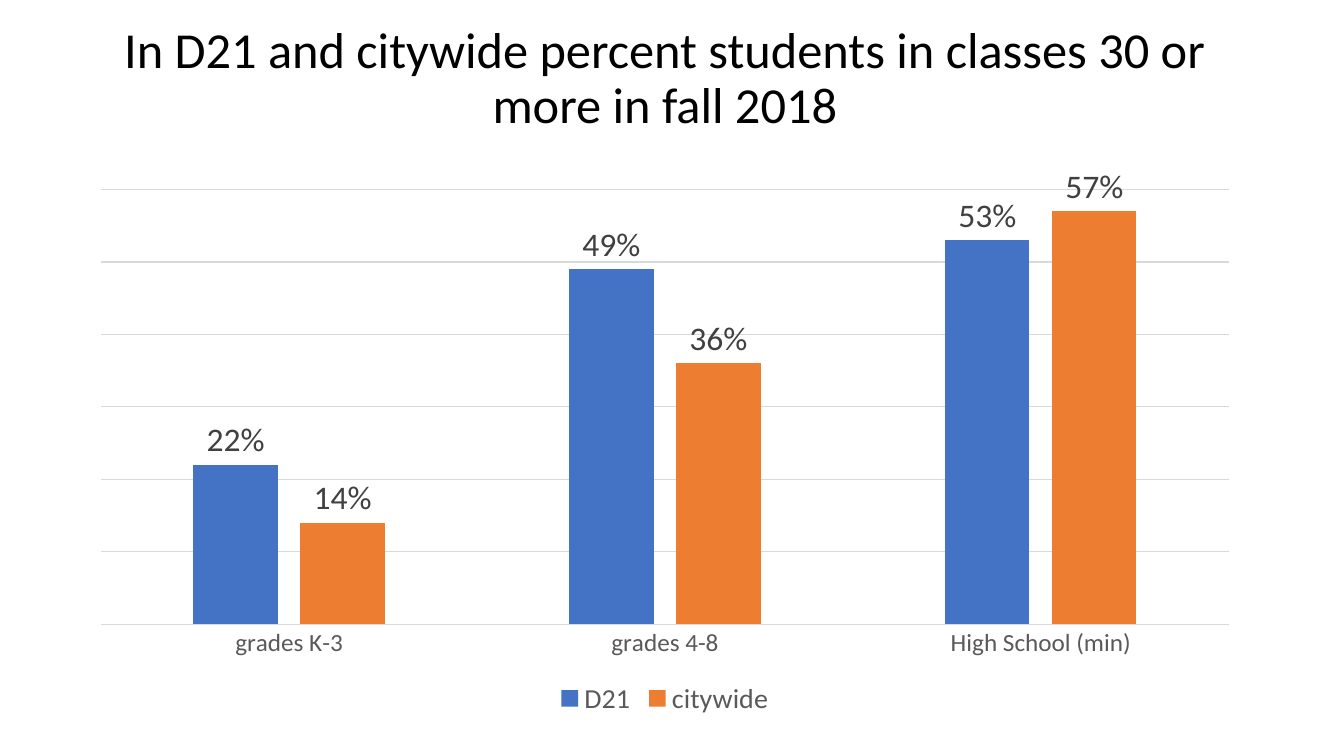
"""Build a slide with a column chart of students in classes of 30 or more."""
from pptx import Presentation
from pptx.chart.data import CategoryChartData
from pptx.dml.color import RGBColor
from pptx.enum.chart import XL_CHART_TYPE, XL_LABEL_POSITION, XL_LEGEND_POSITION, XL_TICK_MARK
from pptx.enum.text import MSO_ANCHOR, PP_ALIGN
from pptx.util import Pt

COLUMNS = XL_CHART_TYPE.COLUMN_CLUSTERED
OUTSIDE_END = XL_LABEL_POSITION.OUTSIDE_END
BOTTOM = XL_LEGEND_POSITION.BOTTOM
NO_TICK = XL_TICK_MARK.NONE
MIDDLE = MSO_ANCHOR.MIDDLE
CENTER = PP_ALIGN.CENTER

FONT = "Calibri"
GRID = "D9D9D9"
LEFT, WIDTH = Pt(55.5), Pt(839)


def rgb(color):
    return RGBColor.from_string(color)


def style_font(font, size, color):
    font.name = FONT
    font.size = Pt(size)
    font.bold = False
    font.color.rgb = rgb(color)


prs = Presentation()
prs.slide_width, prs.slide_height = Pt(960), Pt(540)
s = prs.slides.add_slide(prs.slide_layouts[6])

sp = s.shapes.add_textbox(LEFT, Pt(16), WIDTH, Pt(82))
tf = sp.text_frame
tf.word_wrap = True
tf.vertical_anchor = MIDDLE
p = tf.paragraphs[0]
p.alignment = CENTER
p.line_spacing = 0.9
r = p.add_run()
r.text = "In D21 and citywide percent students in classes 30 or more in fall 2018"
style_font(r.font, 36, "000000")

data = CategoryChartData(number_format="0%")
data.categories = ["grades K-3", "grades 4-8", "High School (min)"]
data.add_series("D21", [0.22, 0.49, 0.53])
data.add_series("citywide", [0.14, 0.36, 0.57])
chart = s.shapes.add_chart(COLUMNS, LEFT, Pt(119.5), WIDTH, Pt(395.5), data).chart
style_font(chart.font, 10, "000000")
chart.has_title = False
chart.has_legend = True
chart.legend.position = BOTTOM
chart.legend.include_in_layout = False
style_font(chart.legend.font, 20, "595959")

cat_axis = chart.category_axis
cat_axis.major_tick_mark = NO_TICK
cat_axis.format.line.color.rgb = rgb(GRID)
cat_axis.format.line.width = Pt(0.75)
style_font(cat_axis.tick_labels.font, 18, "595959")

val_axis = chart.value_axis
val_axis.visible = False
val_axis.minimum_scale, val_axis.maximum_scale = 0, 0.6
val_axis.major_unit = 0.1
val_axis.has_major_gridlines = True
val_axis.major_gridlines.format.line.color.rgb = rgb(GRID)
val_axis.major_gridlines.format.line.width = Pt(0.75)

plot = chart.plots[0]
plot.gap_width = 219
plot.overlap = -27
plot.vary_by_categories = False
for series, color in zip(plot.series, ["4472C4", "ED7D31"]):
    series.format.fill.solid()
    series.format.fill.fore_color.rgb = rgb(color)
    labels = series.data_labels
    labels.show_value = True
    labels.position = OUTSIDE_END
    labels.number_format = "0%"
    labels.number_format_is_linked = False
    style_font(labels.font, 24, "404040")

prs.save("out.pptx")
